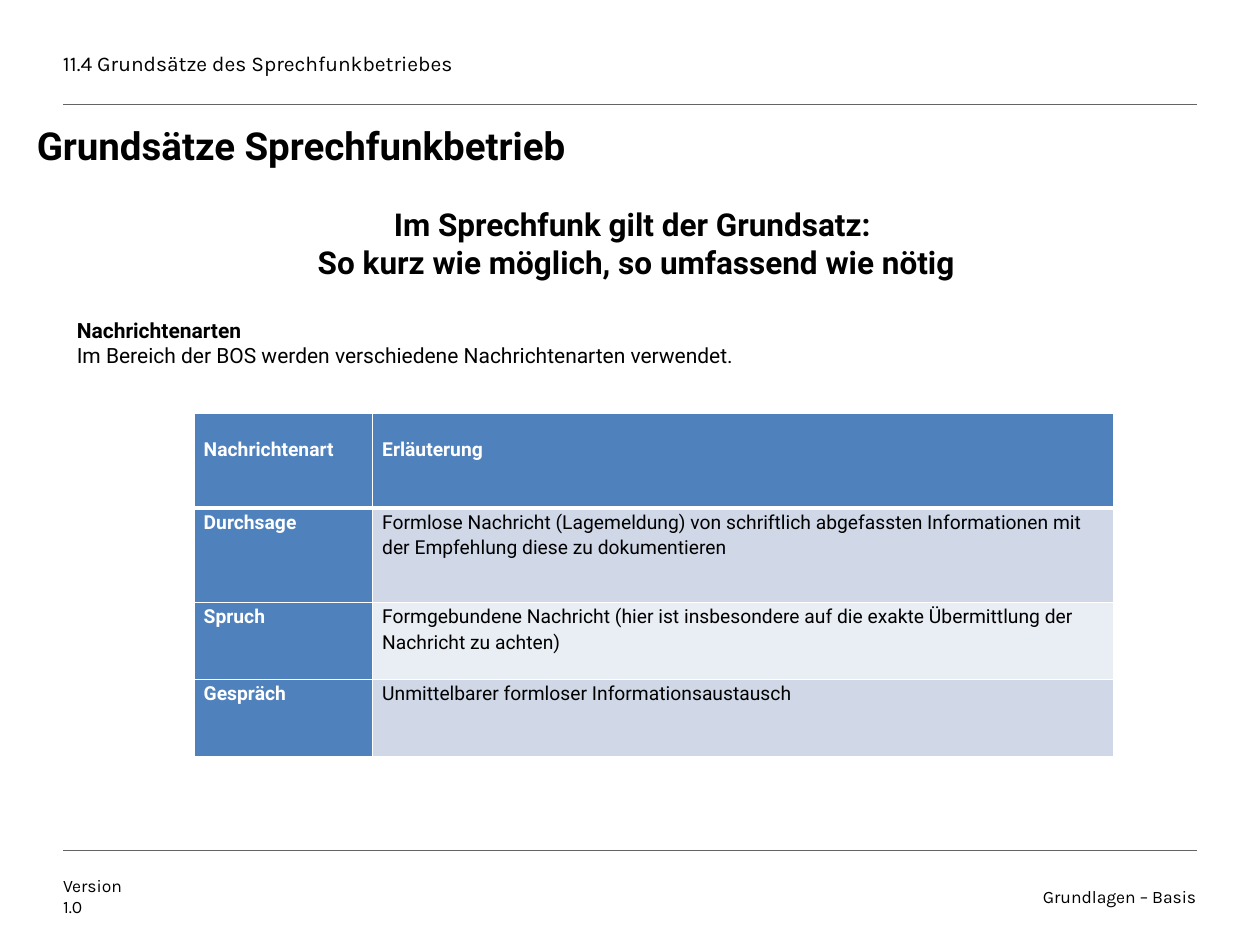
from lxml.etree import SubElement as Sub
from pptx import Presentation
from pptx.dml.color import RGBColor
from pptx.enum.shapes import MSO_CONNECTOR as Conn, MSO_SHAPE as Shape
from pptx.enum.text import MSO_ANCHOR as Anchor, PP_ALIGN as Align
from pptx.oxml.ns import qn
from pptx.util import Pt


def color(code):
    return RGBColor.from_string(code)


def write(frame, text, size=11, font="Roboto", ink="000000", bold=False,
          align=Align.LEFT, space=None, anchor=Anchor.TOP, pad=(0, 0, 0, 0)):
    """Fill a frame; bold is one flag, or one flag per line."""
    frame.word_wrap = True
    frame.vertical_anchor = anchor
    (frame.margin_left, frame.margin_top,
     frame.margin_right, frame.margin_bottom) = map(Pt, pad)
    lines = text.split("\n")
    flags = bold if isinstance(bold, tuple) else (bold,) * len(lines)
    for i, (line, flag) in enumerate(zip(lines, flags)):
        para = frame.paragraphs[0] if i == 0 else frame.add_paragraph()
        para.alignment = align
        if space:
            para.line_spacing = space
        run = para.add_run()
        run.text = line
        run.font.size, run.font.name, run.font.bold = Pt(size), font, flag
        run.font.color.rgb = color(ink)


def edge(cell, side, width, ink="FFFFFF"):
    line = Sub(cell._tc.get_or_add_tcPr(), qn("a:ln" + side), w=str(Pt(width)))
    fill = Sub(line, qn("a:solidFill"))
    Sub(fill, qn("a:srgbClr"), val=ink)


class Page:
    rule = "646464"
    head = "4F81BD"
    bands = ("D0D8E8", "E9EDF4")
    small = "Karla"

    def __init__(self, deck):
        self.slide = deck.slides.add_slide(deck.slide_layouts[6])
        self.shapes = self.slide.shapes

    def line(self, left, right, y):
        line = self.shapes.add_connector(
            Conn.STRAIGHT, Pt(left), Pt(y), Pt(right), Pt(y))
        line.line.color.rgb = color(self.rule)
        line.line.width = Pt(0.25)
        Sub(line._element.spPr, qn("a:effectLst"))

    def text(self, box, text, **style):
        shape = self.shapes.add_textbox(*map(Pt, box))
        write(shape.text_frame, text, **style)

    def note(self, box, text, size=10, **style):
        self.text(box, text, size=size, font=self.small,
                  anchor=Anchor.MIDDLE, **style)

    def panel(self, box, text, fill="FFFFFF", **style):
        shape = self.shapes.add_shape(Shape.RECTANGLE, *map(Pt, box))
        shape.shadow.inherit = False
        shape.fill.solid()
        shape.fill.fore_color.rgb = color(fill)
        shape.line.fill.background()
        write(shape.text_frame, text, **style)

    def table(self, left, top, cols, rows, data):
        table = self.shapes.add_table(
            len(rows), len(cols), Pt(left), Pt(top),
            Pt(sum(cols)), Pt(sum(rows))).table
        table.horz_banding = False
        for col, width in zip(table.columns, cols):
            col.width = Pt(width)
        for r, (row, high) in enumerate(zip(data, rows)):
            table.rows[r].height = Pt(high)
            for c, text in enumerate(row):
                self.cell(table.cell(r, c), r, c, text)

    def cell(self, cell, r, c, text):
        head = r == 0 or c == 0
        write(cell.text_frame, text, bold=head, space=1.15,
              ink="FFFFFF" if head else "000000")
        cell.margin_left = cell.margin_right = Pt(5.4)
        cell.margin_top = Pt(12.3 if r == 0 else 0)
        cell.margin_bottom = 0
        thick = {"T": 3 if r == 1 else 1, "B": 3 if r == 0 else 1}
        for side in "LRTB":
            edge(cell, side, thick.get(side, 1))
        cell.fill.solid()
        cell.fill.fore_color.rgb = color(
            self.head if head else self.bands[(r - 1) % 2])


def main():
    deck = Presentation()
    deck.slide_width, deck.slide_height = Pt(720), Pt(540)
    page = Page(deck)

    # Header and footer
    for y in (59.8, 486):
        page.line(36, 684, y)
    page.note((36, 24, 438, 24), "11.4 Grundsätze des Sprechfunkbetriebes",
              size=12)
    page.note((36, 496, 40.5, 32), "Version\n1.0")
    page.note((581, 496, 102.5, 32), "Grundlagen – Basis", align=Align.RIGHT)

    # Title
    page.text((21, 72, 531, 48), "Grundsätze Sprechfunkbetrieb",
              size=22, bold=True, space=Pt(24))

    # Kinds of message
    page.table(111, 236.2, (102, 423.5), (54, 54, 44, 44), (
        ("Nachrichtenart", "Erläuterung"),
        ("Durchsage", "Formlose Nachricht (Lagemeldung) von schriftlich "
         "abgefassten Informationen mit der Empfehlung diese zu "
         "dokumentieren"),
        ("Spruch", "Formgebundene Nachricht (hier ist insbesondere auf die "
         "exakte Übermittlung der Nachricht zu achten)"),
        ("Gespräch", "Unmittelbarer formloser Informationsaustausch"),
    ))
    page.panel((22.3, 169.2, 436.3, 44), "Nachrichtenarten\nIm Bereich der "
               "BOS werden verschiedene Nachrichtenarten verwendet.",
               size=12, bold=(True, False), anchor=Anchor.MIDDLE,
               pad=(21.6, 12.2, 7.2, 2.9))

    # Guiding rule
    page.text((42.5, 113.8, 642.2, 51), "Im Sprechfunk gilt der Grundsatz: \n"
              "So kurz wie möglich, so umfassend wie nötig",
              size=18, bold=True, align=Align.CENTER,
              pad=(7.2, 3.6, 7.2, 3.6))

    deck.save("out.pptx")


if __name__ == "__main__":
    main()
